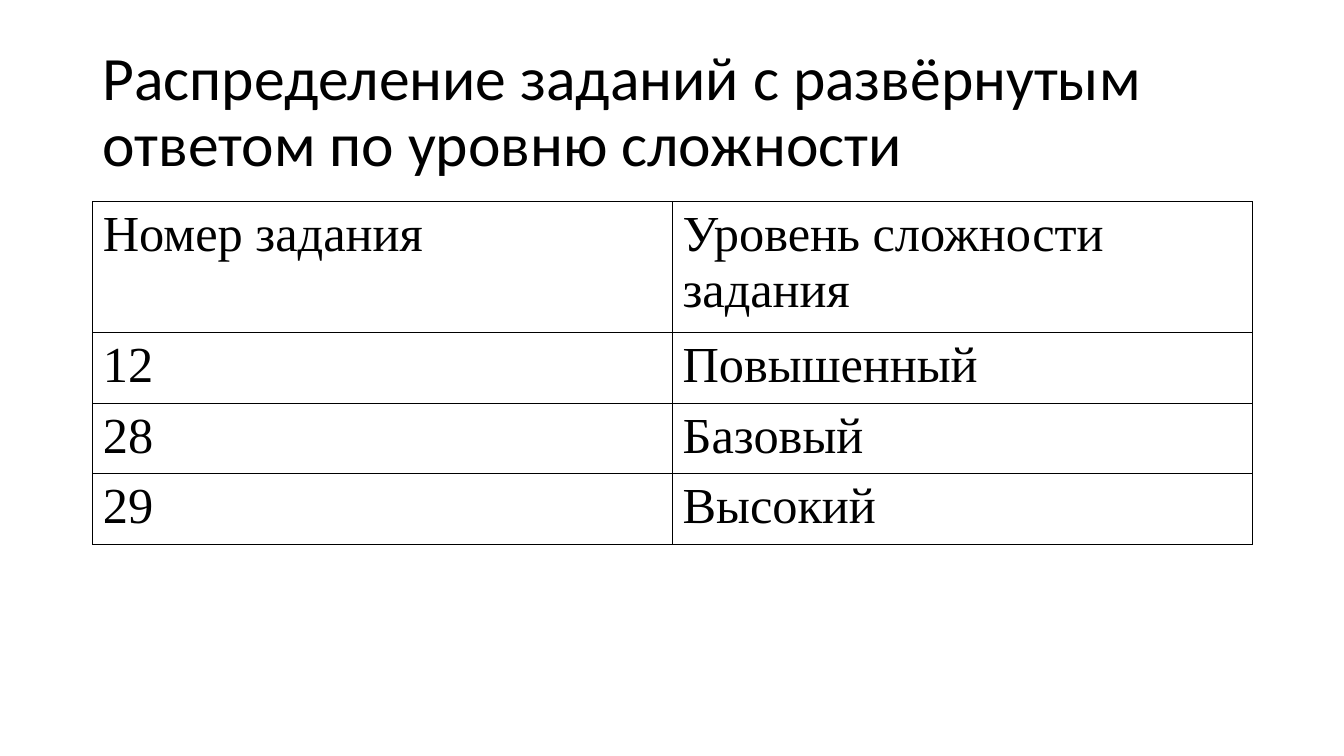
from lxml import etree
from pptx import Presentation
from pptx.dml.color import RGBColor
from pptx.enum.text import MSO_ANCHOR
from pptx.oxml.ns import qn
from pptx.util import Inches, Pt

MIDDLE = MSO_ANCHOR.MIDDLE
INK = "000000"
LEFT, WIDTH = Inches(0.92), Inches(11.5)
TABLE_TOP = Inches(2)
HEADER_HEIGHT, ROW_HEIGHT = Inches(1.2), Inches(0.65)
ROWS = [
    ("Номер задания", "Уровень сложности задания"),
    ("12", "Повышенный"),
    ("28", "Базовый"),
    ("29", "Высокий"),
]


def style_text(paragraph, font_name, size, color=INK):
    paragraph.font.name = font_name
    paragraph.font.size = Pt(size)
    paragraph.font.bold = False
    paragraph.font.color.rgb = RGBColor.from_string(color)


def add_borders(cell, color=INK, width=1):
    properties = cell._tc.get_or_add_tcPr()
    for position, side in enumerate(("lnL", "lnR", "lnT", "lnB")):
        line = etree.Element(qn(f"a:{side}"), w=str(Pt(width)))
        fill = etree.SubElement(line, qn("a:solidFill"))
        etree.SubElement(fill, qn("a:srgbClr"), val=color)
        properties.insert(position, line)


deck = Presentation()
deck.slide_width, deck.slide_height = Inches(13.33), Inches(7.5)
page = deck.slides.add_slide(deck.slide_layouts[6])

title_box = page.shapes.add_textbox(LEFT, Inches(0.4), WIDTH, Inches(1.45))
title_frame = title_box.text_frame
title_frame.word_wrap = True
title_frame.vertical_anchor = MIDDLE
title = title_frame.paragraphs[0]
title.text = "Распределение заданий с развёрнутым ответом по уровню сложности"
title.line_spacing = 0.9
style_text(title, "Calibri", 44)

table_height = HEADER_HEIGHT + ROW_HEIGHT * (len(ROWS) - 1)
table = page.shapes.add_table(
    len(ROWS), len(ROWS[0]), LEFT, TABLE_TOP, WIDTH, table_height
).table
table.horz_banding = False

for row_index, row in enumerate(ROWS):
    table.rows[row_index].height = ROW_HEIGHT if row_index else HEADER_HEIGHT
    for column_index, text in enumerate(row):
        cell = table.cell(row_index, column_index)
        cell.text = text
        style_text(cell.text_frame.paragraphs[0], "Times New Roman", 36)
        cell.fill.background()
        add_borders(cell)

deck.save("out.pptx")
